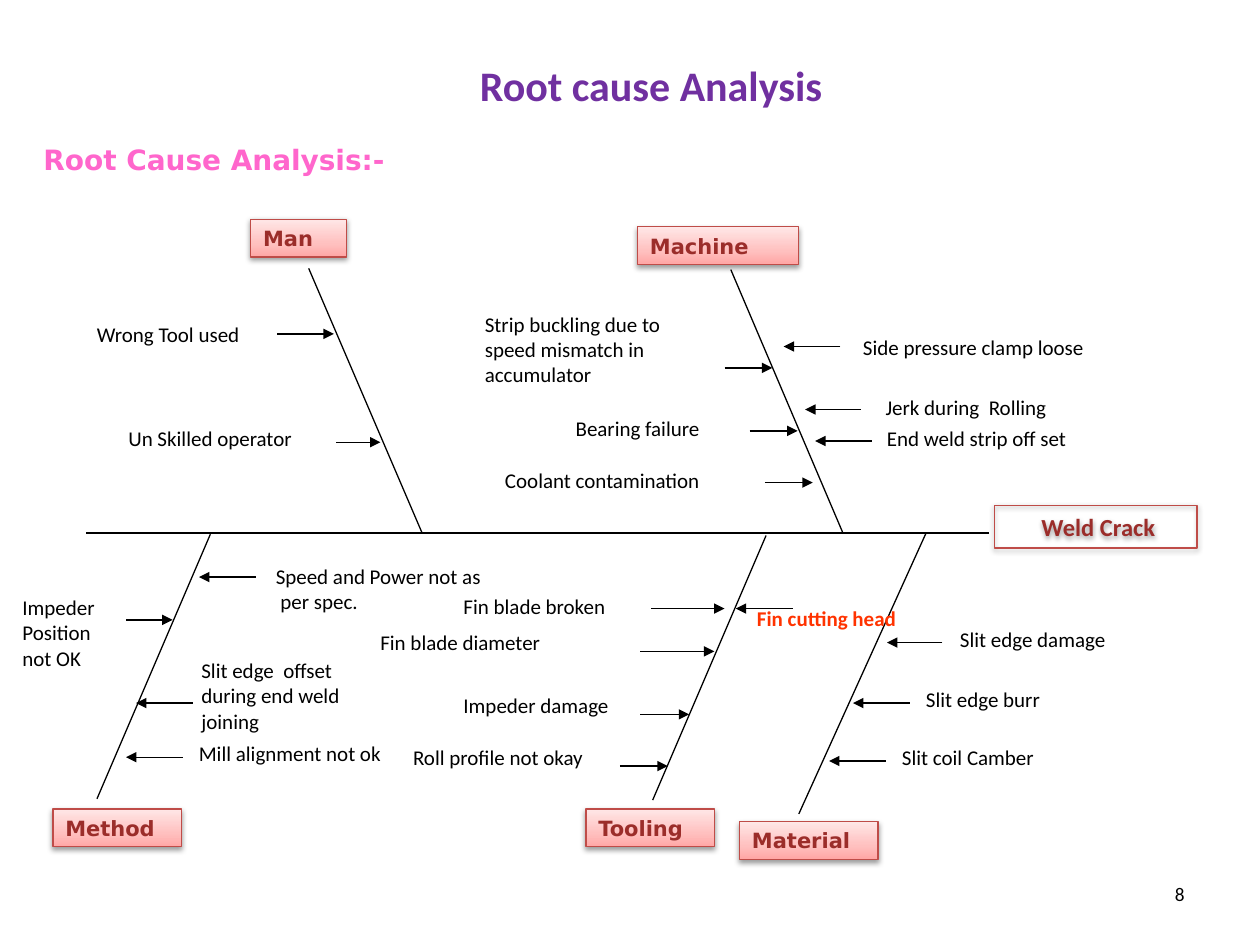
from dataclasses import dataclass

from lxml import etree
from pptx import Presentation
from pptx.dml.color import RGBColor
from pptx.enum.shapes import MSO_CONNECTOR, MSO_SHAPE
from pptx.enum.text import MSO_ANCHOR, MSO_AUTO_SIZE, PP_ALIGN
from pptx.oxml import parse_xml
from pptx.oxml.ns import nsdecls, qn
from pptx.util import Inches, Pt

STRAIGHT = MSO_CONNECTOR.STRAIGHT
RECTANGLE = MSO_SHAPE.RECTANGLE
TOP, MIDDLE = MSO_ANCHOR.TOP, MSO_ANCHOR.MIDDLE
LEFT, CENTER, RIGHT = PP_ALIGN.LEFT, PP_ALIGN.CENTER, PP_ALIGN.RIGHT
GROW, FIXED = MSO_AUTO_SIZE.SHAPE_TO_FIT_TEXT, MSO_AUTO_SIZE.NONE
TITLE_ONLY = 5


@dataclass(frozen=True)
class Style:
    size: float
    color: str
    font: str = "Calibri"
    bold: bool = False


@dataclass(frozen=True)
class Theme:
    title: Style = Style(24, "7030A0", bold=True)
    subtitle: Style = Style(16, "FF66CC", "DejaVu Sans", True)
    category: Style = Style(12, "9B2D2A", "DejaVu Sans", True)
    effect: Style = Style(14, "9B2D2A", bold=True)
    cause: Style = Style(12, "000000")
    alert: Style = Style(12, "FF3300", bold=True)
    page: Style = Style(11, "000000")
    line: str = "000000"
    border: str = "BF4C48"
    gradient: tuple = ((0, "FFA6A5"), (35, "FFC0BF"), (100, "FFE7E7"))
    line_width: float = 0.75


@dataclass(frozen=True)
class Cause:
    text: str
    left: float
    top: float
    width: float
    arrow: tuple
    height: float = 0.3
    wraps: bool = False
    style: Style = Theme.cause


THEME = Theme()

SPINE = (7.85, 4.23, 0.68, 4.23)

BONES = [
    (5.8, 2.14, 6.69, 4.23),
    (2.45, 2.13, 3.35, 4.23),
    (6.34, 6.46, 7.35, 4.23),
    (0.77, 6.34, 1.67, 4.24),
    (5.18, 6.35, 6.08, 4.25),
]

CATEGORIES = [
    ("Man", 1.99, 1.74, 0.76),
    ("Machine", 5.06, 1.8, 1.28),
    ("Method", 0.42, 6.42, 1.02),
    ("Tooling", 4.65, 6.42, 1.02),
    ("Material", 5.87, 6.52, 1.1),
]

CAUSES = [
    Cause("Wrong Tool used", 0.67, 2.5, 1.35, (2.2, 2.65, 2.65)),
    Cause("Un Skilled operator", 0.92, 3.33, 1.51, (2.67, 3.02, 3.51)),
    Cause("Strip buckling due to speed mismatch in accumulator",
          3.75, 2.42, 2, (5.75, 6.13, 2.92), 0.71, True),
    Cause("Bearing failure", 4.47, 3.25, 1.19, (5.95, 6.33, 3.42)),
    Cause("Coolant contamination", 3.91, 3.66, 1.76, (6.07, 6.45, 3.83)),
    Cause("Side pressure clamp loose", 6.75, 2.61, 2.01, (6.67, 6.22, 2.75)),
    Cause("Jerk during  Rolling", 6.93, 3.08, 1.49, (6.83, 6.39, 3.25)),
    Cause("End weld strip off set", 6.94, 3.33, 1.64, (6.92, 6.47, 3.5)),
    Cause("Speed and Power not as\n per spec.",
          2.09, 4.42, 1.85, (2.03, 1.58, 4.58), 0.51),
    Cause("Impeder Position not OK", 0.08, 4.67, 1, (1, 1.37, 4.92), 0.71, True),
    Cause("Slit edge  offset  during end weld joining",
          1.5, 5.17, 1.33, (1.53, 1.08, 5.58), 0.71, True),
    Cause("Mill alignment not ok", 1.48, 5.83, 1.66, (1.45, 1, 6.01)),
    Cause("Fin blade broken", 3.58, 4.66, 1.58, (5.17, 5.75, 4.83), wraps=True),
    Cause("Fin blade diameter", 2.92, 4.95, 2.25, (5.08, 5.67, 5.17), wraps=True),
    Cause("Impeder damage", 3.58, 5.45, 1.58, (5.08, 5.47, 5.67), wraps=True),
    Cause("Roll profile not okay", 3.18, 5.86, 1.57, (4.92, 5.3, 6.08)),
    Cause("Fin cutting head", 5.91, 4.76, 1.33, (6.29, 5.84, 4.83),
          style=THEME.alert),
    Cause("Slit edge damage", 7.52, 4.92, 1.39, (7.48, 7.04, 5.1)),
    Cause("Slit edge burr", 7.25, 5.4, 1.11, (7.22, 6.77, 5.58)),
    Cause("Slit coil Camber", 7.06, 5.86, 2.69, (7.03, 6.58, 6.04), wraps=True),
]


def rgb(color):
    return RGBColor.from_string(color)


def write_text(shape, text, style, align=LEFT, anchor=TOP, wraps=True, fit=GROW):
    frame = shape.text_frame
    frame.word_wrap = wraps
    frame.auto_size = fit
    frame.vertical_anchor = anchor
    for index, line in enumerate(text.split("\n")):
        paragraph = frame.add_paragraph() if index else frame.paragraphs[0]
        paragraph.alignment = align
        run = paragraph.add_run()
        run.text = line
        run.font.name = style.font
        run.font.size = Pt(style.size)
        run.font.bold = style.bold
        run.font.color.rgb = rgb(style.color)


def add_label(slide, text, box, style, **layout):
    shape = slide.shapes.add_textbox(*map(Inches, box))
    write_text(shape, text, style, **layout)


def add_line(slide, ends, arrow=False):
    connector = slide.shapes.add_connector(STRAIGHT, *map(Inches, ends))
    connector.line.color.rgb = rgb(THEME.line)
    connector.line.width = Pt(THEME.line_width)
    if arrow:
        outline = connector.line._get_or_add_ln()
        etree.SubElement(outline, qn("a:tailEnd"), type="triangle")
    etree.SubElement(connector._element.spPr, qn("a:effectLst"))


def add_gradient(shape):
    stops = "".join(
        f'<a:gs pos="{position * 1000}"><a:srgbClr val="{color}"/></a:gs>'
        for position, color in THEME.gradient)
    gradient = parse_xml(
        f'<a:gradFill {nsdecls("a")}><a:gsLst>{stops}</a:gsLst>'
        '<a:lin ang="16200000" scaled="0"/></a:gradFill>')
    shape._element.spPr.find(qn("a:prstGeom")).addnext(gradient)


def add_shadow(shape):
    shape.shadow.inherit = False
    shadow = parse_xml(
        f'<a:outerShdw {nsdecls("a")} blurRad="{Pt(3.1)}" dist="{Pt(1.6)}" '
        'dir="5400000" rotWithShape="0"><a:srgbClr val="000000">'
        '<a:alpha val="38000"/></a:srgbClr></a:outerShdw>')
    shape._element.spPr.find(qn("a:effectLst")).append(shadow)


def add_box(slide, text, box, style, align=LEFT, filled=True):
    shape = slide.shapes.add_shape(RECTANGLE, *map(Inches, box))
    if filled:
        add_gradient(shape)
    else:
        shape.fill.background()
    shape.line.color.rgb = rgb(THEME.border)
    shape.line.width = Pt(THEME.line_width)
    add_shadow(shape)
    write_text(shape, text, style, align, MIDDLE)


def add_cause(slide, cause):
    start, end, height = cause.arrow
    add_line(slide, (start, height, end, height), arrow=True)
    add_label(slide, cause.text, (cause.left, cause.top, cause.width, cause.height),
              cause.style, wraps=cause.wraps)


def set_title(slide, text, box):
    title = slide.shapes.title
    title.left, title.top, title.width, title.height = map(Inches, box)
    write_text(title, text, THEME.title, CENTER, MIDDLE, fit=FIXED)


def main():
    presentation = Presentation()
    presentation.slide_width = Inches(10)
    presentation.slide_height = Inches(7.5)
    slide = presentation.slides.add_slide(presentation.slide_layouts[TITLE_ONLY])
    set_title(slide, " Root cause Analysis", (1.17, 0.42, 7.92, 0.5))
    add_label(slide, " Root Cause Analysis:-", (0.17, 1.08, 3.1, 0.37),
              THEME.subtitle, wraps=False)
    for ends in [SPINE, *BONES]:
        add_line(slide, ends)
    for name, left, top, width in CATEGORIES:
        add_box(slide, name, (left, top, width, 0.3), THEME.category)
    add_box(slide, " Weld Crack", (7.89, 4.01, 1.61, 0.34), THEME.effect,
            CENTER, filled=False)
    for cause in CAUSES:
        add_cause(slide, cause)
    add_label(slide, "8", (7.17, 6.95, 2.33, 0.4), THEME.page,
              align=RIGHT, fit=FIXED)
    presentation.save("out.pptx")


if __name__ == "__main__":
    main()
